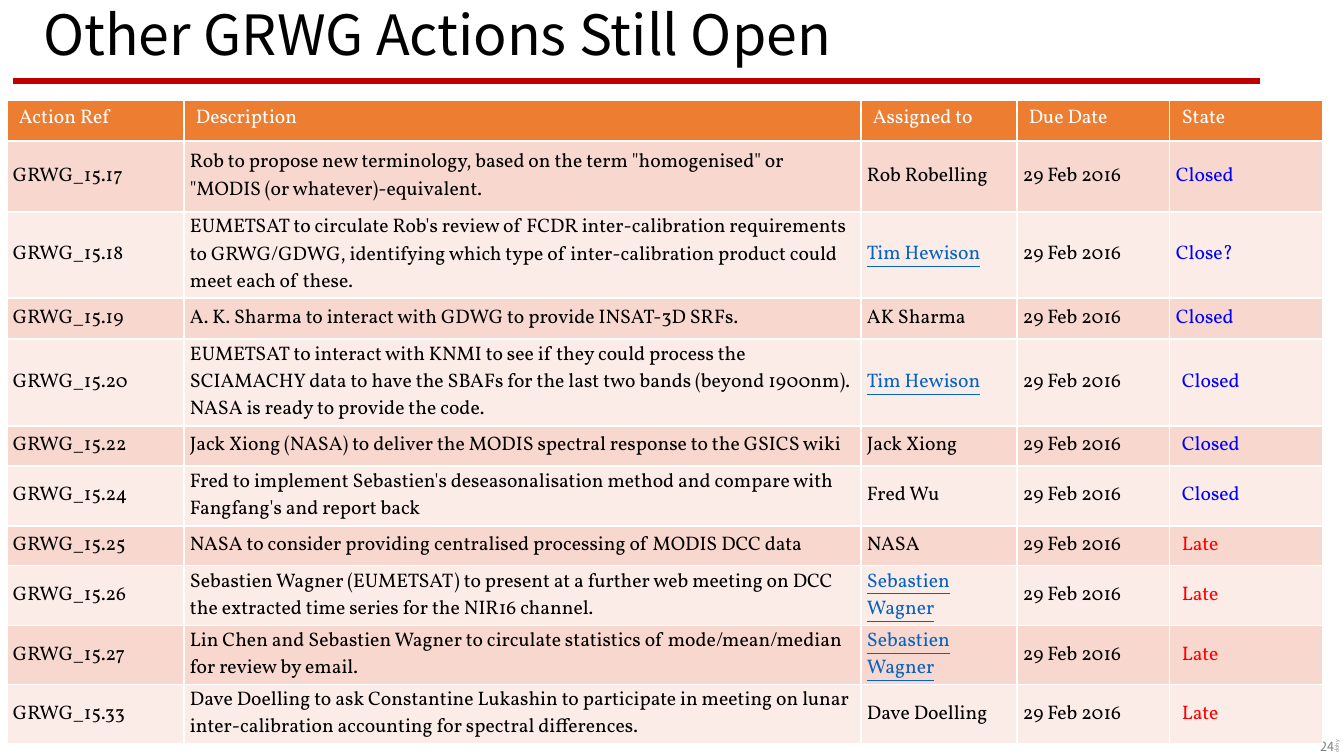
from dataclasses import dataclass

from lxml import etree
from pptx import Presentation
from pptx import util as u
from pptx.dml.color import RGBColor
from pptx.enum import shapes, text
from pptx.oxml import ns

SANS, SERIF = "Noto Sans CJK KR", "Vollkorn"
BLACK = RGBColor(0x00, 0x00, 0x00)
WHITE = RGBColor(0xFF, 0xFF, 0xFF)
GREY = RGBColor(0x80, 0x80, 0x80)
DARK_RED = RGBColor(0xC0, 0x00, 0x00)
ORANGE = RGBColor(0xED, 0x7D, 0x31)
BAND_DARK = RGBColor(0xF8, 0xD7, 0xCE)
BAND_LIGHT = RGBColor(0xFC, 0xEC, 0xE8)
LINK_BLUE = RGBColor(0x05, 0x63, 0xC1)
BLUE = RGBColor(0x00, 0x00, 0xFF)
RED = RGBColor(0xFF, 0x00, 0x00)

NARROW, WIDE = (6, 2), (12, 5)
HEADERS = ("Action Ref", "Description", "Assigned to", "Due Date", "State")
COLUMN_WIDTHS = (177, 677, 156, 153, 153)
ROW_HEIGHTS = (41, 71, 86, 41, 87, 40, 60, 40, 60, 59, 59)
DUE_DATE = "29 Feb 2016"


@dataclass(frozen=True)
class Action:
    number: int
    description: str
    assignee: str
    state: str
    linked: bool = False
    state_inset: tuple[int, int] = WIDE


@dataclass(frozen=True)
class Label:
    words: str
    box: tuple[int, int, int, int]
    size: float
    align: text.PP_ALIGN
    rotation: int = 0


ACTIONS = (
    Action(17, 'Rob to propose new terminology, based on the term "homogenised" or '
           '"MODIS (or whatever)-equivalent.', "Rob Robelling", "Closed", state_inset=NARROW),
    Action(18, "EUMETSAT to circulate Rob's review of FCDR inter-calibration requirements to "
           "GRWG/GDWG, identifying which type of inter-calibration product could meet each "
           "of these.", "Tim Hewison", "Close?", True, NARROW),
    Action(19, "A. K. Sharma to interact with GDWG to provide INSAT-3D SRFs.",
           "AK Sharma", "Closed", state_inset=NARROW),
    Action(20, "EUMETSAT to interact with KNMI to see if they could process the SCIAMACHY data "
           "to have the SBAFs for the last two bands (beyond 1900nm). NASA is ready to provide "
           "the code.", "Tim Hewison", "Closed", True),
    Action(22, "Jack Xiong (NASA) to deliver the MODIS spectral response to the GSICS wiki",
           "Jack Xiong", "Closed"),
    Action(24, "Fred to implement Sebastien's deseasonalisation method and compare with "
           "Fangfang's and report back", "Fred Wu", "Closed"),
    Action(25, "NASA to consider providing centralised processing of MODIS DCC data",
           "NASA", "Late"),
    Action(26, "Sebastien Wagner (EUMETSAT) to present at a further web meeting on DCC the "
           "extracted time series for the NIR16 channel.", "Sebastien Wagner", "Late", True),
    Action(27, "Lin Chen and Sebastien Wagner to circulate statistics of mode/mean/median for "
           "review by email.", "Sebastien Wagner", "Late", True),
    Action(33, "Dave Doelling to ask Constantine Lukashin to participate in meeting on lunar "
           "inter-calibration accounting for spectral differences.", "Dave Doelling", "Late"),
)
LABELS = (
    Label("24", (1229, 734, 115, 25), 9, text.PP_ALIGN.RIGHT),
    Label("dohy", (1279, 697, 115, 16), 3.8, text.PP_ALIGN.LEFT, 270),
)


def px(length: int) -> int:
    return round(length * u.Inches(1) / 100.8)


def apply(target, values: dict) -> None:
    for name, value in values.items():
        setattr(target, name, value)


def write(para, words: str, font: str, size: float, color: RGBColor,
          underline: bool = False) -> None:
    span = para.add_run()
    span.text = words
    apply(span.font, {"name": font, "size": u.Pt(size), "bold": False, "underline": underline})
    span.font.color.rgb = color


def fill_cell(cell, words: str, fill: RGBColor, color: RGBColor, inset: tuple[int, int],
              anchor: text.MSO_ANCHOR, underline: bool = False) -> None:
    side, edge = map(px, inset)
    apply(cell, {"margin_left": side, "margin_right": side, "margin_top": edge,
                 "margin_bottom": edge, "vertical_anchor": anchor})
    cell.fill.solid()
    cell.fill.fore_color.rgb = fill
    write(cell.text_frame.paragraphs[0], words, SERIF, 14, color, underline)


def add_title(page) -> None:
    title = page.shapes.title
    apply(title, {"left": px(33), "top": px(8), "width": px(1159), "height": px(60)})
    apply(title.text_frame, {"vertical_anchor": text.MSO_ANCHOR.MIDDLE, "word_wrap": True,
                             "auto_size": text.MSO_AUTO_SIZE.NONE})
    para = title.text_frame.paragraphs[0]
    apply(para, {"alignment": text.PP_ALIGN.LEFT, "line_spacing": 0.9})
    write(para, "Other GRWG Actions Still Open", SANS, 39.6, BLACK)


def add_rule(page) -> None:
    rule = page.shapes.add_connector(shapes.MSO_CONNECTOR.STRAIGHT,
                                     px(13), px(81), px(1260), px(81))
    rule.line.color.rgb = DARK_RED
    rule.line.width = u.Pt(4.5)
    etree.SubElement(rule._element.spPr, ns.qn("a:effectLst"))


def add_label(page, label: Label) -> None:
    box = page.shapes.add_textbox(*map(px, label.box))
    box.rotation = label.rotation
    box.text_frame.word_wrap = True
    para = box.text_frame.paragraphs[0]
    para.alignment = label.align
    write(para, label.words, SANS, label.size, GREY)


def add_actions(page) -> None:
    table = page.shapes.add_table(len(ROW_HEIGHTS), len(HEADERS), px(7), px(100),
                                  px(sum(COLUMN_WIDTHS)), px(sum(ROW_HEIGHTS))).table
    for column, width in zip(table.columns, COLUMN_WIDTHS):
        column.width = px(width)
    for row, height in zip(table.rows, ROW_HEIGHTS):
        row.height = px(height)
    for column, header in enumerate(HEADERS):
        fill_cell(table.cell(0, column), header, ORANGE, WHITE, WIDE, text.MSO_ANCHOR.TOP)
    for row, action in enumerate(ACTIONS, 1):
        fill = BAND_DARK if row % 2 else BAND_LIGHT
        entries = (
            (f"GRWG_15.{action.number}", BLACK, NARROW, False),
            (action.description, BLACK, NARROW, False),
            (action.assignee, LINK_BLUE if action.linked else BLACK, NARROW, action.linked),
            (DUE_DATE, BLACK, NARROW, False),
            (action.state, RED if action.state == "Late" else BLUE, action.state_inset, False),
        )
        for column, (words, color, inset, underline) in enumerate(entries):
            fill_cell(table.cell(row, column), words, fill, color, inset,
                      text.MSO_ANCHOR.MIDDLE, underline)


def main() -> None:
    deck = Presentation()
    apply(deck, {"slide_width": px(1344), "slide_height": px(756)})
    page = deck.slides.add_slide(deck.slide_layouts[5])
    add_rule(page)
    for label in LABELS:
        add_label(page, label)
    add_title(page)
    add_actions(page)
    deck.save("out.pptx")


if __name__ == "__main__":
    main()
